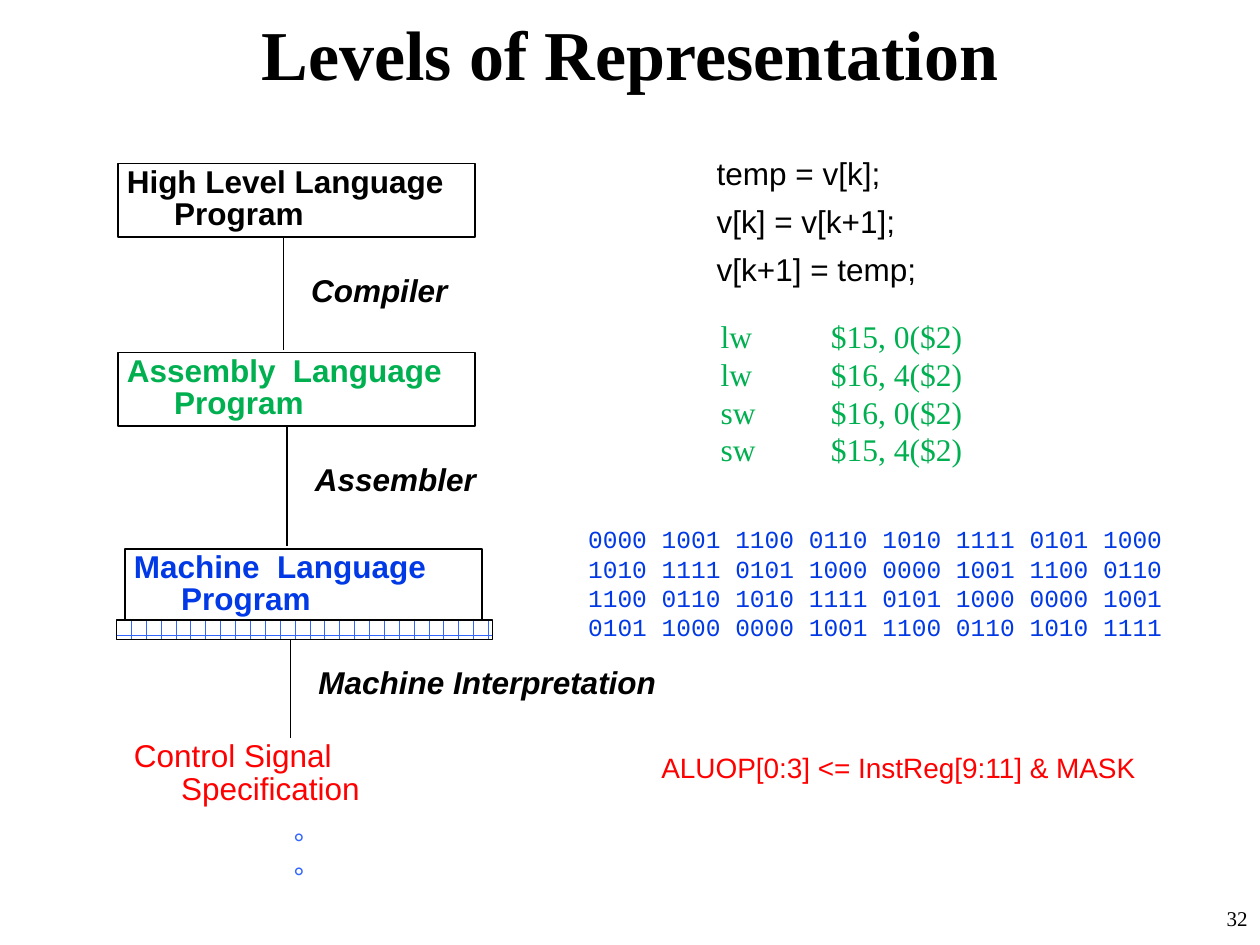
"""Build the slide on levels of program representation."""
from dataclasses import dataclass

from lxml import etree
from pptx import Presentation
from pptx import util as u
from pptx.dml.color import RGBColor
from pptx.enum import dml, shapes, text
from pptx.oxml.ns import qn


@dataclass(frozen=True)
class Theme:
    black: str = "000000"
    white: str = "FFFFFF"
    green: str = "00B050"
    blue: str = "0039E5"
    brick: str = "3366FF"
    red: str = "FF0000"
    sans: str = "Arial"
    serif: str = "Times New Roman"
    mono: str = "Courier New"
    title: int = 40
    body: int = 18
    signal: int = 16
    bits: int = 14
    number: int = 12


theme = Theme()
WIDE, TIGHT = (7.2, 3.6), (5, 2.2)
LEFT, CENTER, RIGHT = text.PP_ALIGN.LEFT, text.PP_ALIGN.CENTER, text.PP_ALIGN.RIGHT
HANGING = 27


def write(holder, lines, size, color, font=theme.sans, inset=WIDE, anchor=text.MSO_ANCHOR.TOP,
          hanging=0, tab=None, bold=False, italic=False, **spacing):
    frame = holder.text_frame
    across, down = map(u.Pt, inset)
    frame_format = dict(word_wrap=True, auto_size=text.MSO_AUTO_SIZE.NONE, vertical_anchor=anchor,
                        margin_left=across, margin_right=across, margin_top=down, margin_bottom=down)
    for name, value in frame_format.items():
        setattr(frame, name, value)
    for index, line in enumerate(lines):
        paragraph = frame.add_paragraph() if index else frame.paragraphs[0]
        for name, value in {"alignment": LEFT, **spacing}.items():
            setattr(paragraph, name, value)
        properties = paragraph._p.get_or_add_pPr()
        if hanging:
            properties.set("marL", str(u.Pt(hanging)))
            properties.set("indent", str(-u.Pt(hanging)))
        if tab:
            stops = etree.SubElement(properties, qn("a:tabLst"))
            etree.SubElement(stops, qn("a:tab"), pos=str(u.Pt(tab)), algn="l")
        run = paragraph.add_run()
        run.text = line
        for name, value in dict(size=u.Pt(size), name=font, bold=bold, italic=italic).items():
            setattr(run.font, name, value)
        run.font.color.rgb = RGBColor.from_string(color)


def add_box(x, y, width, height):
    box = slide.shapes.add_shape(shapes.MSO_SHAPE.RECTANGLE, *map(u.Pt, (x, y, width, height)))
    box.shadow.inherit = False
    box.fill.background()
    box.line.color.rgb = RGBColor.from_string(theme.black)
    box.line.width = u.Pt(1)
    return box


deck = Presentation()
deck.slide_width, deck.slide_height = u.Pt(720), u.Pt(540)
slide = deck.slides.add_slide(deck.slide_layouts[6])

high_level_code = ["temp = v[k];", "v[k] = v[k+1];", "v[k+1] = temp;"]
assembly_code = [f"{op}\t\t${register},\t{offset}($2)" for op, register, offset in
                 [("lw", 15, 0), ("lw", 16, 4), ("sw", 16, 0), ("sw", 15, 4)]]
machine_code = ["0000 1001 1100 0110 1010 1111 0101 1000",
                "1010 1111 0101 1000 0000 1001 1100 0110",
                "1100 0110 1010 1111 0101 1000 0000 1001",
                "0101 1000 0000 1001 1100 0110 1010 1111"]
step_format = dict(size=theme.body, color=theme.black, inset=TIGHT, bold=True, italic=True,
                   line_spacing=0.85)

passages = [
    ((0, 0, 720, 60.5), ["Levels of Representation"],
     dict(size=theme.title, color=theme.black, font=theme.serif, bold=True, alignment=CENTER,
          anchor=text.MSO_ANCHOR.MIDDLE)),
    ((570, 514, 150, 26), ["32"],
     dict(size=theme.number, color=theme.black, font=theme.serif, alignment=RIGHT)),
    ((404.6, 88.6, 244, 79), high_level_code,
     dict(size=theme.body, color=theme.black, inset=TIGHT, hanging=HANGING, line_spacing=0.88,
          space_before=u.Pt(8.4))),
    ((406.8, 179.3, 246, 91.4), assembly_code,
     dict(size=theme.body, color=theme.green, font=theme.serif, inset=TIGHT, hanging=HANGING,
          tab=84.24, line_spacing=u.Pt(21.5))),
    ((329, 296, 351, 74), machine_code,
     dict(size=theme.bits, color=theme.blue, font=theme.mono, line_spacing=u.Pt(16.8))),
    ((370.8, 425.5, 289, 26.6), ["ALUOP[0:3] <= InstReg[9:11] & MASK"],
     dict(size=theme.signal, color=theme.red)),
    ((172.8, 156.2, 104, 22.3), ["Compiler"], step_format),
    ((175, 264.2, 114, 22.3), ["Assembler"], step_format),
    ((177, 380.2, 214, 22.3), ["Machine Interpretation"], step_format),
    ((160.6, 468, 21, 46), ["°", "°"],
     dict(size=theme.signal, color=theme.brick, line_spacing=u.Pt(19.4))),
]
for place, lines, passage_format in passages:
    write(slide.shapes.add_textbox(*map(u.Pt, place)), lines, **passage_format)

levels = [
    (67.5, 93.5, "High Level Language Program", theme.black),
    (67.5, 201.5, "Assembly  Language Program", theme.green),
    (71.5, 313.5, "Machine  Language Program", theme.blue),
]
for x, y, level, color in levels:
    write(add_box(x, y, 204, 41.8), [level], theme.body, color, inset=TIGHT, hanging=HANGING,
          bold=True, line_spacing=0.85)

control_signal = slide.shapes.add_textbox(*map(u.Pt, (71.5, 421.2, 204, 43)))
write(control_signal, ["Control Signal Specification"], theme.body, theme.red, inset=TIGHT,
      hanging=HANGING, line_spacing=0.88)

for x, top, bottom in [(162, 136, 200), (164, 244, 312), (166, 354.5, 422)]:
    step = slide.shapes.add_connector(shapes.MSO_CONNECTOR.STRAIGHT,
                                      *map(u.Pt, (x, top, x, bottom)))
    step.line.color.rgb = RGBColor.from_string(theme.black)
    step.line.width = u.Pt(1)
    etree.SubElement(step._element.spPr, qn("a:effectLst"))

hardware_boundary = add_box(66.5, 354.5, 215, 11)
hardware_boundary.fill.patterned()
hardware_boundary.fill.pattern = dml.MSO_PATTERN.HORIZONTAL_BRICK
hardware_boundary.fill.fore_color.rgb = RGBColor.from_string(theme.brick)
hardware_boundary.fill.back_color.rgb = RGBColor.from_string(theme.white)

deck.save("out.pptx")
